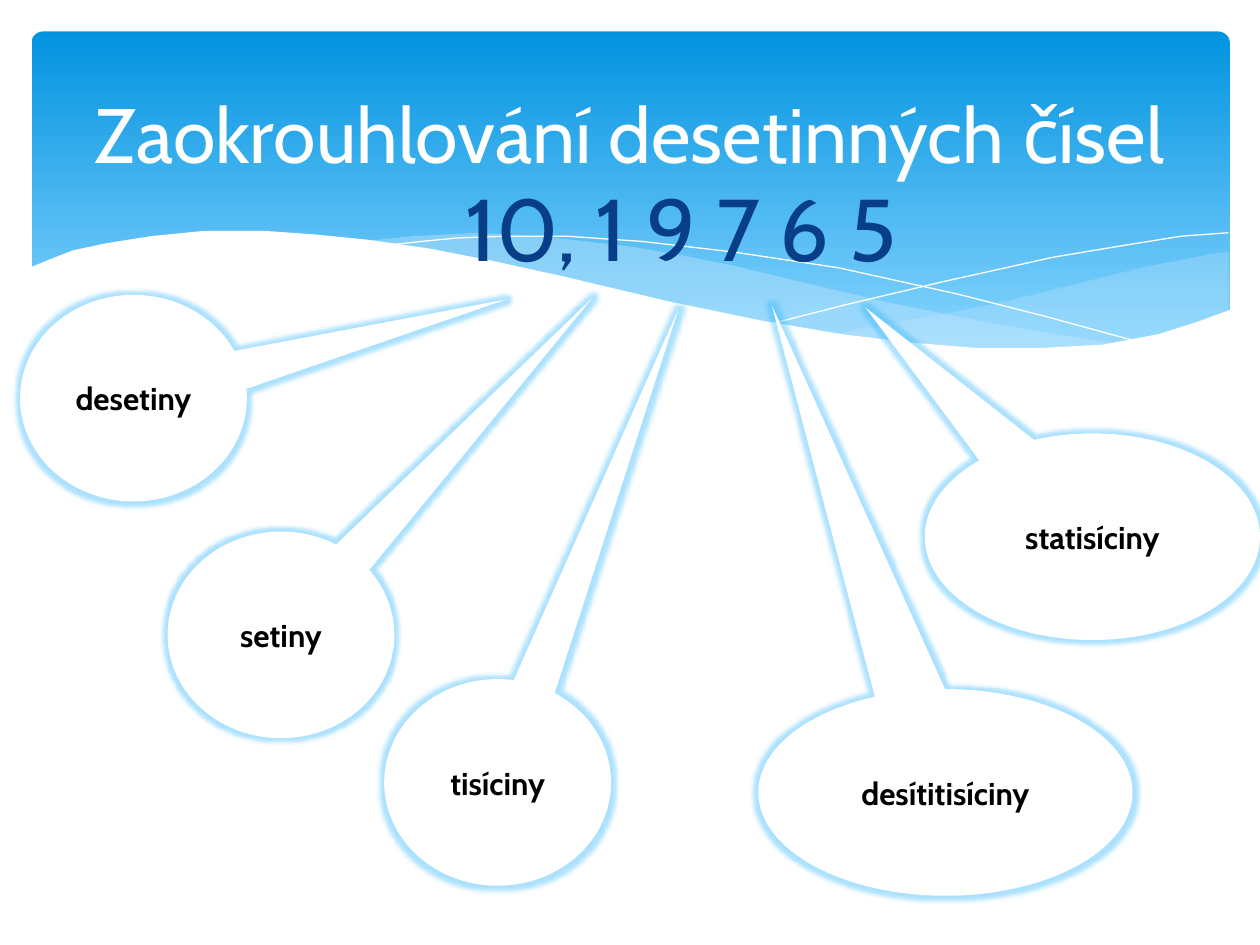
from lxml import etree
from pptx import Presentation
from pptx.dml.color import RGBColor
from pptx.enum import shapes, text
from pptx.oxml import ns
from pptx.util import Pt

FONT = "Cabin"
HUES = {"top": "0293E0", "low": "83D3FE", "veil": "C6E7FC", "white": "FFFFFF",
        "navy": "073E87", "black": "000000", "glow": "31B6FD"}


def hue(name):
    return RGBColor.from_string(HUES[name])


def add_xml(node, tag, **attrs):
    return etree.SubElement(node, ns.qn(tag), attrs)


deck = Presentation()
deck.slide_width, deck.slide_height = Pt(720), Pt(540)
slide = deck.slides.add_slide(deck.slide_layouts[1])
tree = slide.shapes

# Blue banner
band = tree.add_shape(shapes.MSO_SHAPE.ROUNDED_RECTANGLE, Pt(18), Pt(18), Pt(684.7), Pt(194.4))
band.adjustments[0] = 0.034
band.shadow.inherit = False
band.line.fill.background()
band.fill.gradient()
band.fill.gradient_angle = 270
for stop, (name, spot) in zip(band.fill.gradient_stops, [("top", 0), ("low", 0.9)]):
    stop.color.rgb = hue(name)
    stop.position = spot

# Waves: fill colour (None for a thin line), opacity in percent, points
waves = [
    ("veil", 29, [
        (702, 144), (692.6, 145.4), (673, 149), (652, 153.4), (620, 160.6), (580, 170.6),
        (542, 178.6), (508, 185), (476, 190.8), (508, 195.1), (545, 198.7), (578, 200.2),
        (608, 199.4), (634, 197.3), (657, 193.7), (678, 188.6), (702, 177.8)]),
    ("veil", 40, [
        (643, 196.6), (603, 190.8), (558, 182.9), (508, 172.8), (453, 159.8), (420, 151.9),
        (390, 146), (361, 141.1), (318, 136.1), (274, 133.2), (236, 134.6), (206, 137.5),
        (246, 143.3), (291, 151.9), (323, 159.8), (382, 172.8), (433, 183.6), (479, 191.5),
        (520, 197.3), (557, 199.4), (589, 200.2), (617, 199.4)]),
    (None, 100, [
        (222.5, 140.4), (241, 137.5), (261, 136.1), (289, 134.6), (324, 135.4), (367, 138.2),
        (419, 144), (479, 153.4), (547, 167.8), (598, 180.7), (653, 195.8)]),
    (None, 100, [
        (441, 185), (484, 173.5), (539, 160.6), (602, 146.9), (644, 139.7), (675, 135.4),
        (702, 133.2)]),
    ("white", 100, [
        (703.4, 177.1), (684, 184.3), (662, 190.8), (630, 196.6), (593, 199.4), (560, 198.7),
        (523, 195.8), (481, 190.8), (434, 182.9), (381, 172.1), (322, 158.4), (281, 149),
        (245, 141.8), (210, 136.8), (180, 133.9), (152, 132.5), (116, 132.5), (86, 134.6),
        (61, 139), (42.5, 143.3), (29, 148.3), (16.6, 153.4), (16.6, 236.9), (703.4, 236.9)]),
]
for name, alpha, spots in waves:
    pen = tree.build_freeform(*spots[0], scale=Pt(1))
    pen.add_line_segments(spots[1:], close=name is not None)
    wave = pen.convert_to_shape()
    wave.shadow.inherit = False
    if name:
        wave.fill.solid()
        wave.fill.fore_color.rgb = hue(name)
        wave.line.fill.background()
        if alpha < 100:
            tint = wave.element.spPr.find(".//" + ns.qn("a:srgbClr"))
            add_xml(tint, "a:alpha", val=str(alpha * 1000))
    else:
        wave.fill.background()
        wave.line.color.rgb = hue("white")
        wave.line.width = Pt(0)

# Number and title, in front of the waves
title, body = slide.shapes.title, slide.placeholders[1]
heads = [
    (body, "10, 1 9 7 6 5", (93.6, 95.8, 583.2, 271.4), 50, "navy",
     text.PP_ALIGN.LEFT, text.MSO_ANCHOR.TOP),
    (title, "Zaokrouhlování desetinných čísel", (36, 26.6, 648, 98.6), 44, "white",
     text.PP_ALIGN.CENTER, text.MSO_ANCHOR.MIDDLE),
]
for head, words, box, size, name, align, anchor in heads:
    tree.element.append(head.element)
    head.left, head.top, head.width, head.height = map(Pt, box)
    frame = head.text_frame
    frame.text = words
    frame.auto_size = text.MSO_AUTO_SIZE.NONE
    frame.vertical_anchor = anchor
    para = frame.paragraphs[0]
    para.alignment = align
    para.space_before = Pt(0)
    para.font.name, para.font.size = FONT, Pt(size)
    para.font.color.rgb = hue(name)
props = body.text_frame.paragraphs[0]._p.get_or_add_pPr()
props.set("marL", str(Pt(165)))
props.set("indent", "0")
add_xml(props, "a:buNone")
props.append(props.find(ns.qn("a:defRPr")))

# Callouts: word, left, top, width, tip offset as shares of width and height
calls = [
    ("desetiny", 11.5, 168.5, 129.6, 1.646, -0.478),
    ("setiny", 95.8, 303.8, 129.6, 1.374, -1.632),
    ("tisíciny", 219.6, 388.1, 129.6, 0.798, -2.292),
    ("desítitisíciny", 433.4, 393.8, 213.8, -0.464, -2.357),
    ("statisíciny", 528.5, 247.7, 191.5, -0.677, -1.109),
]
for word, left, top, width, *tip in calls:
    call = tree.add_shape(shapes.MSO_SHAPE.OVAL_CALLOUT, Pt(left), Pt(top), Pt(width), Pt(118.1))
    call.adjustments[0], call.adjustments[1] = tip
    call.fill.solid()
    call.fill.fore_color.rgb = hue("white")
    call.line.fill.background()
    call.shadow.inherit = False
    glow = add_xml(call.element.spPr.find(ns.qn("a:effectLst")), "a:glow", rad=str(Pt(5)))
    tint = add_xml(glow, "a:srgbClr", val=HUES["glow"])
    add_xml(tint, "a:alpha", val="40000")
    frame = call.text_frame
    frame.text = word
    frame.vertical_anchor = text.MSO_ANCHOR.MIDDLE
    para = frame.paragraphs[0]
    para.alignment = text.PP_ALIGN.CENTER
    para.font.name, para.font.size, para.font.bold = FONT, Pt(18), True
    para.font.color.rgb = hue("black")

deck.save("out.pptx")
